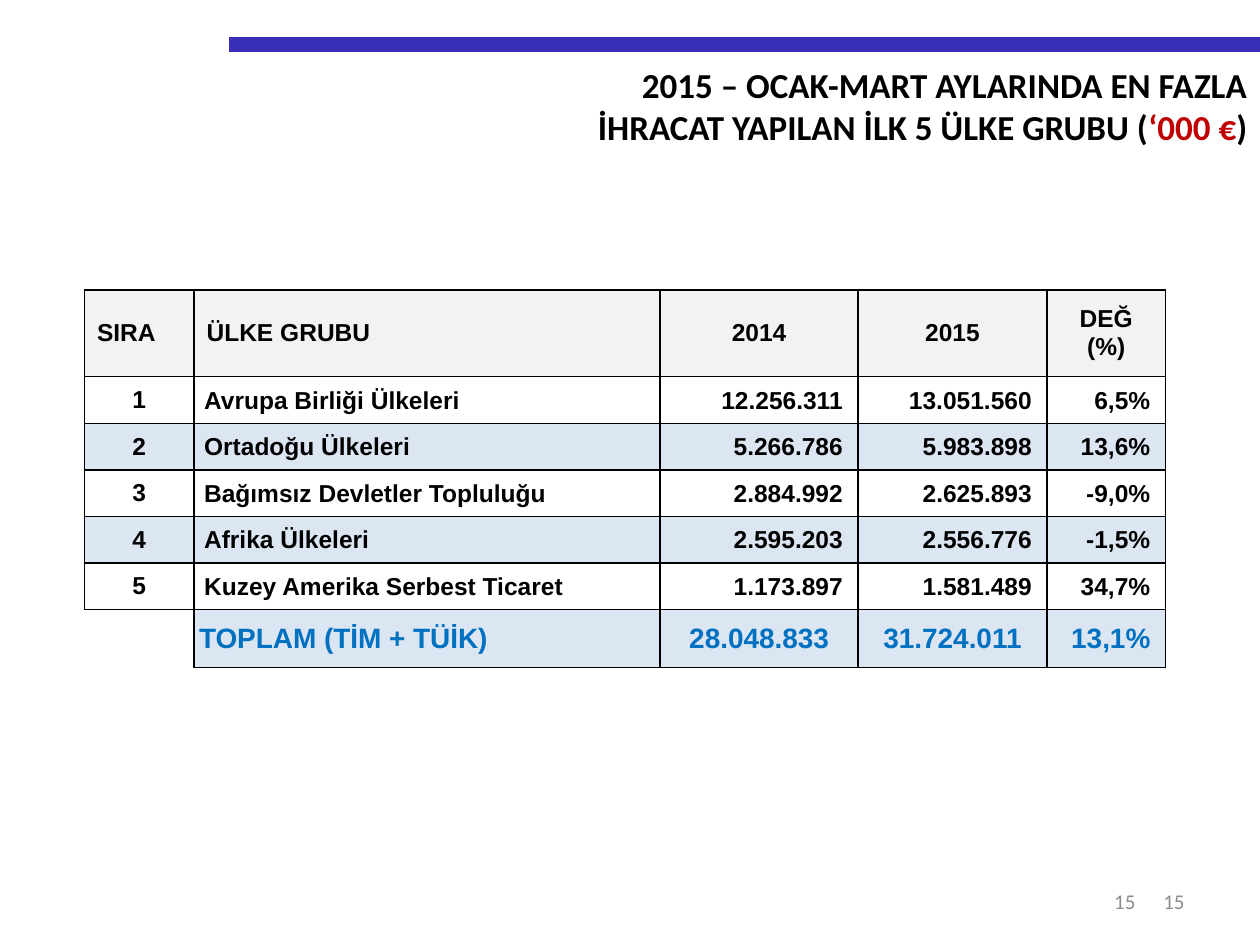
"""Builds the slide on the five country groups with the most exports."""
import pptx
import pptx.dml.color
import pptx.enum.text
import pptx.oxml
import pptx.oxml.ns
import pptx.util
from pptx.util import Inches

ALIGN = pptx.enum.text.PP_ALIGN
MIDDLE = pptx.enum.text.MSO_ANCHOR.MIDDLE
BLACK, RED, BLUE, GREY = "000000", "C00000", "0070C0", "8C8C8C"
HEADER_FILL, BAND_FILL = "F2F2F2", "DCE6F2"
DEFAULT_INSETS = (0.1, 0.05, 0.1, 0.05)
NUMBER_INSETS = (0.01, 0.01, 0.12, 0)
COLUMN_WIDTHS = [0.87, 3.7, 1.57, 1.5, 0.94]
ROW_HEIGHTS = [0.69] + [0.37] * 5 + [0.46]
ROWS = [
    ["SIRA", "ÜLKE GRUBU", "2014", "2015", "DEĞ\n(%)"],
    ["1", "Avrupa Birliği Ülkeleri", "12.256.311", "13.051.560", "6,5%"],
    ["2", "Ortadoğu Ülkeleri", "5.266.786", "5.983.898", "13,6%"],
    ["3", "Bağımsız Devletler Topluluğu", "2.884.992", "2.625.893", "-9,0%"],
    ["4", "Afrika Ülkeleri", "2.595.203", "2.556.776", "-1,5%"],
    ["5", "Kuzey Amerika Serbest Ticaret", "1.173.897", "1.581.489", "34,7%"],
    ["", "TOPLAM (TİM + TÜİK)", "28.048.833", "31.724.011", "13,1%"],
]
LAST_ROW = len(ROWS) - 1


def rgb(color):
    return pptx.dml.color.RGBColor.from_string(color)


def cell_layout(row, column):
    """Return the alignment and insets of a table cell."""
    if row == 0:
        return (ALIGN.LEFT if column < 2 else ALIGN.CENTER), DEFAULT_INSETS
    if column == 0:
        return ALIGN.CENTER, DEFAULT_INSETS
    if column == 1:
        return ALIGN.LEFT, (0.04 if row == LAST_ROW else 0.08, 0.01, 0.01, 0)
    if row == LAST_ROW and column < 4:
        return ALIGN.CENTER, (0.01, 0.01, 0.01, 0)
    return ALIGN.RIGHT, NUMBER_INSETS


class SlideBuilder:
    """Holds the style and the current slide."""

    heading_font = "Calibri"
    table_font = "Arial"

    def __init__(self, presentation):
        self.slide = presentation.slides.add_slide(presentation.slide_layouts[5])

    def style(self, paragraph, font, size, color, align, bold=False):
        paragraph.alignment = align
        paragraph.font.name = font
        paragraph.font.size = pptx.util.Pt(size)
        paragraph.font.bold = bold
        paragraph.font.color.rgb = rgb(color)

    def title(self, left, top, width, height, lines):
        title = self.slide.shapes.title
        title.left, title.top = Inches(left), Inches(top)
        title.width, title.height = Inches(width), Inches(height)
        frame = title.text_frame
        frame.vertical_anchor = pptx.enum.text.MSO_ANCHOR.TOP
        frame.auto_size = pptx.enum.text.MSO_AUTO_SIZE.NONE
        for index, pieces in enumerate(lines):
            paragraph = frame.add_paragraph() if index else frame.paragraphs[0]
            self.style(paragraph, self.heading_font, 20, BLACK, ALIGN.RIGHT, True)
            for text, color in pieces:
                run = paragraph.add_run()
                run.text = text
                run.font.color.rgb = rgb(color)

    def rule(self, left, top, right, color, width):
        line = self.slide.shapes.add_connector(
            pptx.enum.shapes.MSO_CONNECTOR.STRAIGHT,
            Inches(left), Inches(top), Inches(right), Inches(top))
        line.line.color.rgb = rgb(color)
        line.line.width = pptx.util.Pt(width)
        properties = line._element.spPr
        properties.append(properties.makeelement(pptx.oxml.ns.qn("a:effectLst"), {}))

    def page_number(self, left, top, width, height, text):
        box = self.slide.shapes.add_textbox(
            Inches(left), Inches(top), Inches(width), Inches(height))
        frame = box.text_frame
        frame.word_wrap = True
        frame.vertical_anchor = MIDDLE
        frame.text = text
        self.style(frame.paragraphs[0], self.heading_font, 12, GREY, ALIGN.RIGHT)

    def borders(self, cell, sides):
        properties = cell._tc.get_or_add_tcPr()
        for side in "LRTB":
            fill = (f'<a:solidFill><a:srgbClr val="{BLACK}"/></a:solidFill>'
                    if side in sides else "<a:noFill/>")
            properties.append(pptx.oxml.parse_xml(
                f'<a:ln{side} {pptx.oxml.ns.nsdecls("a")} w="12700">{fill}</a:ln{side}>'))

    def cell(self, cell, row, column, text):
        align, insets = cell_layout(row, column)
        corner = row == LAST_ROW and column == 0
        self.borders(cell, "RT" if corner else "LRTB")
        if corner or row % 2 and row < LAST_ROW:
            cell.fill.background()
        else:
            cell.fill.solid()
            cell.fill.fore_color.rgb = rgb(BAND_FILL if row else HEADER_FILL)
        cell.vertical_anchor = MIDDLE
        (cell.margin_left, cell.margin_top,
         cell.margin_right, cell.margin_bottom) = map(Inches, insets)
        cell.text = text
        size, color = (16, BLUE) if row == LAST_ROW else (14, BLACK)
        for paragraph in cell.text_frame.paragraphs:
            self.style(paragraph, self.table_font, size, color, align, True)

    def table(self, left, top, widths, heights, rows):
        table = self.slide.shapes.add_table(
            len(rows), len(widths), Inches(left), Inches(top),
            Inches(sum(widths)), Inches(sum(heights))).table
        table.first_row = table.horz_banding = False
        for column, width in zip(table.columns, widths):
            column.width = Inches(width)
        for row, height in zip(table.rows, heights):
            row.height = Inches(height)
        for row, texts in enumerate(rows):
            for column, text in enumerate(texts):
                self.cell(table.cell(row, column), row, column, text)


def main():
    presentation = pptx.Presentation()
    presentation.slide_width, presentation.slide_height = Inches(10), Inches(7.5)
    builder = SlideBuilder(presentation)
    builder.rule(1.82, 0.35, 10, "382EB8", 8.5)
    builder.title(1.06, 0.45, 8.94, 0.77, [
        [("2015 – OCAK-MART AYLARINDA EN FAZLA", BLACK)],
        [("İHRACAT YAPILAN İLK 5 ÜLKE GRUBU (", BLACK), ("‘000 €", RED), (")", BLACK)],
    ])
    builder.table(0.67, 2.3, COLUMN_WIDTHS, ROW_HEIGHTS, ROWS)
    for left, width in [(7.17, 2.33), (7.01, 2.1)]:
        builder.page_number(left, 6.95, width, 0.4, "15")
    presentation.save("out.pptx")


if __name__ == "__main__":
    main()
